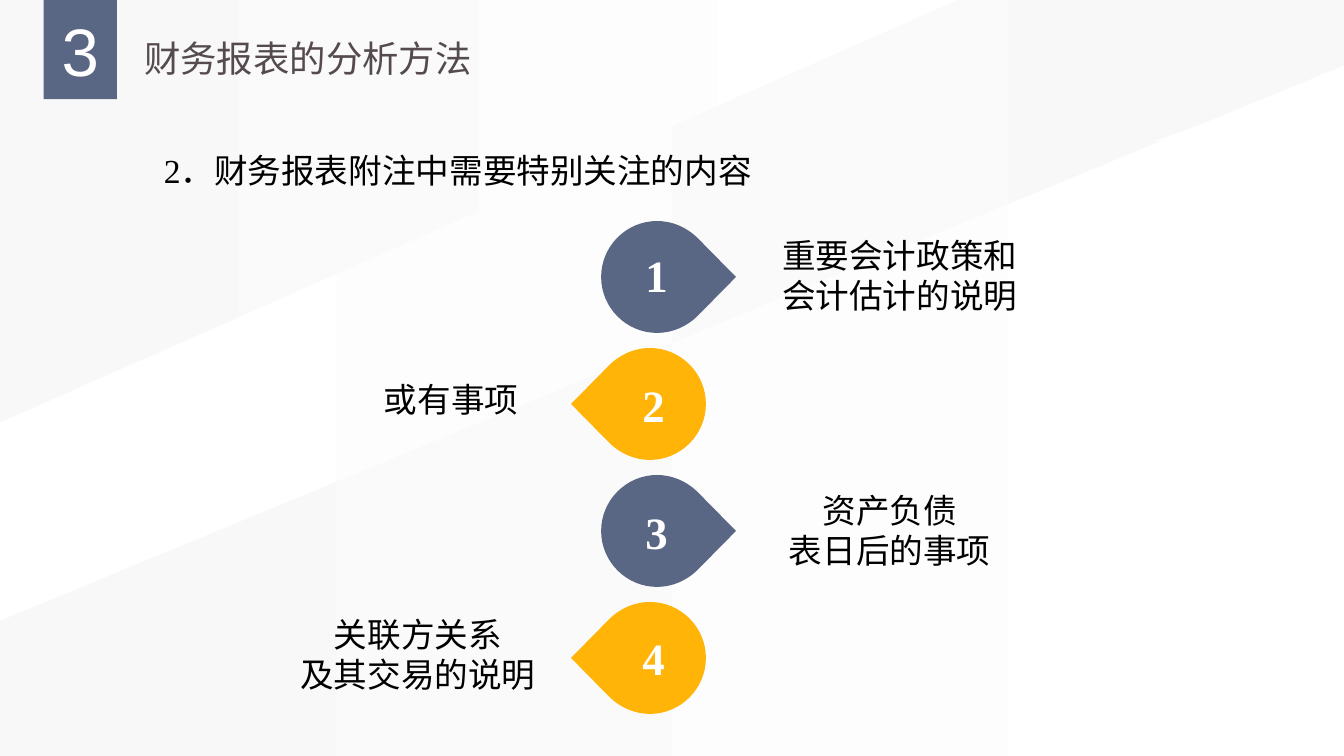
import pptx
import pptx.dml.color
import pptx.enum.shapes
import pptx.enum.text
import pptx.oxml.ns
import pptx.util
import lxml.etree

Cm = pptx.util.Cm
Pt = pptx.util.Pt
qn = pptx.oxml.ns.qn
ALIGN = pptx.enum.text.PP_ALIGN
RECTANGLE = pptx.enum.shapes.MSO_SHAPE.RECTANGLE

COLORS = {"white": "FFFFFF", "mist": "F8F8F8", "slate": "596784",
          "amber": "FFB407", "title": "554B4F", "black": "000000"}
HAN, SERIF, SANS = "Noto Sans CJK SC", "Times New Roman", "Arial"
WIDTH, HEIGHT = 33.87, 19.05

BACKDROP = [
    ([(0, 0), (24.13, 0), (0, 10.64)], "white", "mist"),
    ([(0, 15.65), (WIDTH, 1.65), (WIDTH, HEIGHT), (0, HEIGHT)], "white", "mist"),
    ([(29.11, 3.56), (WIDTH, 1.8), (WIDTH, 3.56)], "white", "white"),
]
TITLE = "财务报表的分析方法"
CHAPTER = "3"
HEADING = "2．财务报表附注中需要特别关注的内容"
ITEMS = [
    (["重要会计政策和", "会计估计的说明"], ALIGN.LEFT, (19.46, 5.79, 7.37, 2.31)),
    (["或有事项"], ALIGN.RIGHT, (9.09, 9.42, 4.22, 1.27)),
    (["资产负债", "表日后的事项"], ALIGN.CENTER, (19.46, 12.22, 5.92, 2.31)),
    (["关联方关系", "及其交易的说明"], ALIGN.CENTER, (7.11, 15.34, 6.84, 2.31)),
]
NUMBERS = [(6.12, 1.75), (9.4, 1.1), (12.6, 1.1), (15.77, 1.1)]
NUMBER_HEIGHT = 1.63
SIDES = [(1, 16.56, 16.55, "slate"), (-1, 16.38, 16.47, "amber")]
FIRST_DROP, DROP_STEP, RADIUS = 6.98, 3.2, 1.41
DROP_START = (-1, 0)
DROP_SEGMENTS = [
    [(-1, -0.55), (-0.55, -1), (0, -1)],
    [(0.27, -1), (0.52, -0.89), (0.71, -0.71)],
    [(1.41, 0)],
    [(0.71, 0.71)],
    [(0.52, 0.89), (0.27, 1), (0, 1)],
    [(-0.55, 1), (-1, 0.55), (-1, 0)],
]


def rgb(name):
    """Return the named colour."""
    return pptx.dml.color.RGBColor.from_string(COLORS[name])


def paint(shape, color):
    """Give a shape a flat fill without line or shadow."""
    shape.shadow.inherit = False
    shape.line.fill.background()
    shape.fill.solid()
    shape.fill.fore_color.rgb = rgb(color)
    return shape


def shade(shape, start, end):
    """Fade a shape from start at its right to end at its left."""
    shape.fill.gradient()
    shape.fill.gradient_angle = 180
    for stop, color in zip(shape.fill.gradient_stops, (start, end)):
        stop.color.rgb = rgb(color)


def add_outline(page, points, color):
    """Draw a closed polygon from points in centimetres."""
    corners = [(Cm(x), Cm(y)) for x, y in points]
    builder = page.shapes.build_freeform(*corners[0])
    builder.add_line_segments(corners[1:], close=True)
    return paint(builder.convert_to_shape(), color)


def add_drop(page, center, middle, direction, color):
    """Draw a drop whose round part is made of Bezier curves."""
    def locate(point):
        return center + direction * RADIUS * point[0], middle + RADIUS * point[1]

    ends = [DROP_START] + [segment[-1] for segment in DROP_SEGMENTS]
    drop = add_outline(page, [locate(point) for point in ends], color)
    lines = list(drop._element.iter(qn("a:lnTo")))
    for line, segment in zip(lines, DROP_SEGMENTS):
        if len(segment) == 3:
            curve = lxml.etree.Element(qn("a:cubicBezTo"))
            for x, y in map(locate, segment):
                lxml.etree.SubElement(curve, qn("a:pt"), x=str(Cm(x) - drop.left),
                                      y=str(Cm(y) - drop.top))
            line.getparent().replace(line, curve)


def add_rectangle(page, place, color):
    """Draw a plain rectangle."""
    return paint(page.shapes.add_shape(RECTANGLE, *map(Cm, place)), color)


def add_box(page, place):
    """Add an empty text box."""
    return page.shapes.add_textbox(*map(Cm, place))


def write(box, lines, size, color, font, align=ALIGN.LEFT, bold=False, wrap=True):
    """Write one paragraph per line and return the last one."""
    frame = box.text_frame
    frame.word_wrap = wrap
    frame.vertical_anchor = pptx.enum.text.MSO_ANCHOR.TOP
    frame.auto_size = pptx.enum.text.MSO_AUTO_SIZE.SHAPE_TO_FIT_TEXT
    for index, line in enumerate(lines):
        para = frame.add_paragraph() if index else frame.paragraphs[0]
        para.alignment = align
        span = para.add_run()
        span.text = line
        span.font.size = Pt(size)
        span.font.bold = bold
        span.font.name = font
        span.font.color.rgb = rgb(color)
        lxml.etree.SubElement(span.font._element, qn("a:ea"), typeface=HAN)
    return para


def add_backdrop(page):
    """Draw the pale background bands."""
    shade(add_rectangle(page, (0, 0, WIDTH, HEIGHT), "mist"), "mist", "white")
    for points, start, end in BACKDROP:
        band = add_outline(page, points, start)
        if start != end:
            shade(band, start, end)


def add_header(page):
    """Add the title, the chapter number and the heading."""
    title = add_box(page, (3.38, 0.46, 8.84, 1.57))
    write(title, [TITLE], 26, "title", HAN, wrap=False).line_spacing = 1.3
    add_rectangle(page, (1.1, 0, 1.85, 2.5), "slate")
    chapter = add_box(page, (1.1, 0.23, 1.85, 2.06))
    frame = chapter.text_frame
    frame.margin_left = frame.margin_right = frame.margin_top = frame.margin_bottom = 0
    write(chapter, [CHAPTER], 48, "white", SANS, ALIGN.CENTER)
    heading = add_box(page, (2.18, 3.66, 17.27, 1.27))
    para = write(heading, [HEADING], 24, "black", SERIF, ALIGN.JUSTIFY)
    para.space_after = Pt(6)
    para._p.get_or_add_pPr().set("indent", str(Cm(1.7)))


def add_item(page, index):
    """Add one numbered drop with its label."""
    lines, align, place = ITEMS[index]
    direction, center, number_center, color = SIDES[index % 2]
    add_drop(page, center, FIRST_DROP + index * DROP_STEP, direction, color)
    top, width = NUMBERS[index]
    number = add_rectangle(
        page, (number_center - width / 2, top, width, NUMBER_HEIGHT), color)
    write(number, [str(index + 1)], 32, "white", SERIF, ALIGN.CENTER, True, index == 0)
    write(add_box(page, place), lines, 24, "black", HAN, align)


def main():
    """Build the slide and save it."""
    deck = pptx.Presentation()
    deck.slide_width, deck.slide_height = Cm(WIDTH), Cm(HEIGHT)
    page = deck.slides.add_slide(deck.slide_layouts[6])
    add_backdrop(page)
    add_header(page)
    for index in range(len(ITEMS)):
        add_item(page, index)
    deck.save("out.pptx")


if __name__ == "__main__":
    main()
